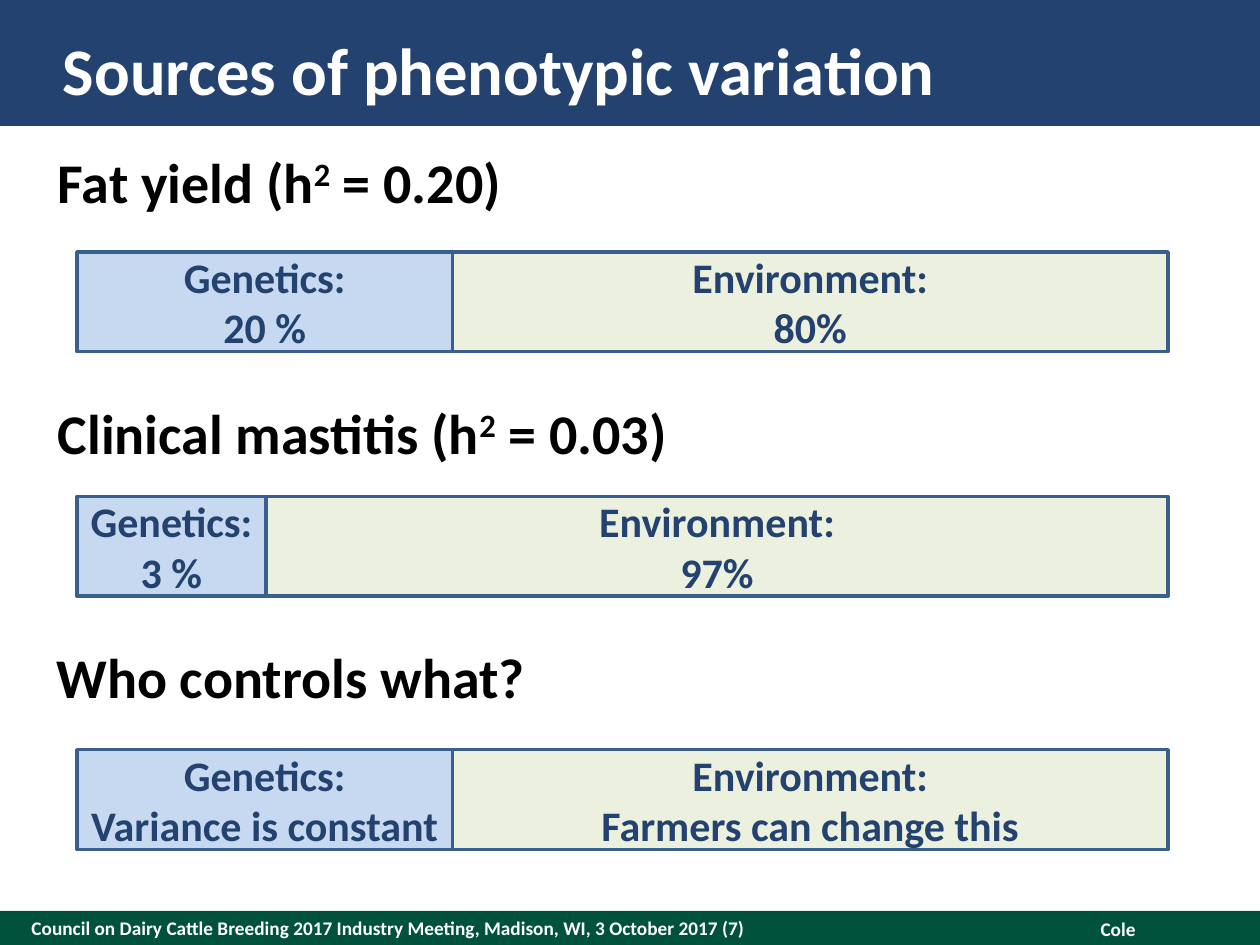
"""Build the slide on sources of phenotypic variation."""
from pptx import Presentation
from pptx.dml.color import RGBColor
from pptx.enum.shapes import MSO_SHAPE
from pptx.enum.text import MSO_ANCHOR, PP_ALIGN
from pptx.util import Pt

NAVY = RGBColor(0x24, 0x42, 0x70)
GREEN = RGBColor(0x00, 0x52, 0x3C)
BLUE = RGBColor(0xC6, 0xD9, 0xF1)
LIME = RGBColor(0xEB, 0xF1, 0xDE)
EDGE = RGBColor(0x3A, 0x5F, 0x8C)
WHITE = RGBColor(0xFF, 0xFF, 0xFF)
BLACK = RGBColor(0x00, 0x00, 0x00)

LEFT, WIDTH, HEIGHT = 44, 623.5, 57
ROWS = [
    ("Fat yield (h^2^ = 0.20)", 26, 80.6, 144, 214.5,
     "Genetics:\n20 %", "Environment:\n80%"),
    ("Clinical mastitis (h^2^ = 0.03)", 26, 224, 283.7, 108,
     "Genetics: 3 %", "Environment:\n97%"),
    ("Who controls what?", 25.2, 363.6, 428.4, 214.5,
     "Genetics:\nVariance is constant", "Environment:\nFarmers can change this"),
]


def write(frame, text, size, color, align=PP_ALIGN.LEFT):
    """Write bold text, raising the parts held between carets."""
    para = frame.paragraphs[0]
    para.alignment = align
    for i, part in enumerate(text.split("^")):
        for j, line in enumerate(part.split("\n")):
            if j:
                para.add_line_break()
            run = para.add_run()
            run.text = line
            style = {"name": "Calibri", "size": Pt(size), "bold": True}
            for key, value in style.items():
                setattr(run.font, key, value)
            run.font.color.rgb = color
            if i % 2:
                run.font._element.set("baseline", "30000")


def add_box(shapes, x, y, w, h, fill, edge=None):
    """Add a flat rectangle, with an outline if an edge colour is given."""
    box = shapes.add_shape(MSO_SHAPE.RECTANGLE, Pt(x), Pt(y), Pt(w), Pt(h))
    box.shadow.inherit = False
    box.fill.solid()
    box.fill.fore_color.rgb = fill
    if edge is None:
        box.line.fill.background()
    else:
        box.line.color.rgb = edge
        box.line.width = Pt(2)
    return box


def add_text(shapes, x, y, w, h, text, size, color, align=PP_ALIGN.LEFT, **style):
    """Add a text box with the given frame settings."""
    box = shapes.add_textbox(Pt(x), Pt(y), Pt(w), Pt(h))
    for key, value in style.items():
        setattr(box.text_frame, key, value)
    write(box.text_frame, text, size, color, align)


def add_bar(shapes, top, split, gene, env):
    """Add a grouped bar cut into genetics and environment."""
    group = shapes.add_group_shape()
    parts = [(LEFT, split, BLUE, gene), (LEFT + split, WIDTH - split, LIME, env)]
    for x, w, fill, text in parts:
        box = add_box(group.shapes, x, top, w, HEIGHT, fill, EDGE)
        box.text_frame.word_wrap = True
        box.text_frame.vertical_anchor = MSO_ANCHOR.MIDDLE
        write(box.text_frame, text, 24, NAVY, PP_ALIGN.CENTER)


def main():
    """Build and save the slide."""
    deck = Presentation()
    deck.slide_width, deck.slide_height = Pt(720), Pt(540)
    shapes = deck.slides.add_slide(deck.slide_layouts[6]).shapes
    flush = {"margin_left": 0, "margin_right": 0, "margin_top": 0,
             "margin_bottom": 0, "word_wrap": True,
             "vertical_anchor": MSO_ANCHOR.MIDDLE}
    add_box(shapes, 0, 520.5, 720, 19.5, GREEN)
    add_box(shapes, 0, 0, 720, 72, NAVY)
    add_text(shapes, 18, 520.5, 504, 19.5,
             "Council on Dairy Cattle Breeding 2017 Industry Meeting, "
             "Madison, WI, 3 October 2017 (7)", 11, WHITE, **flush)
    add_text(shapes, 512, 520.5, 144, 21, "Cole", 11, WHITE,
             PP_ALIGN.RIGHT, word_wrap=True)
    add_text(shapes, 36, 14.4, 648, 50.4, "Sources of phenotypic variation",
             38, WHITE, **flush)
    for head, x, y, top, split, gene, env in ROWS:
        add_bar(shapes, top, split, gene, env)
        add_text(shapes, x, y, 368, 46, head, 32, BLACK, word_wrap=True)
    deck.save("out.pptx")


if __name__ == "__main__":
    main()
